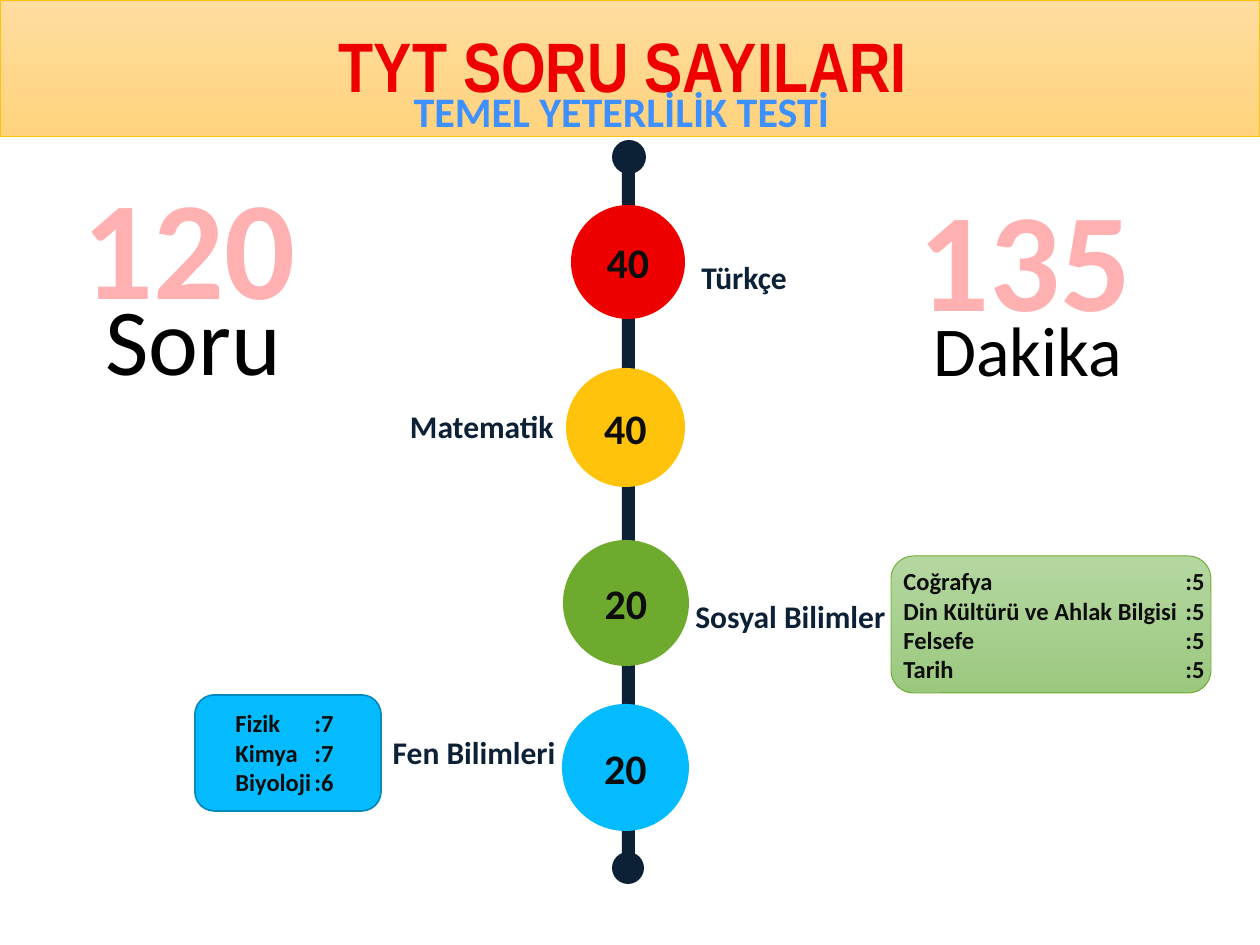
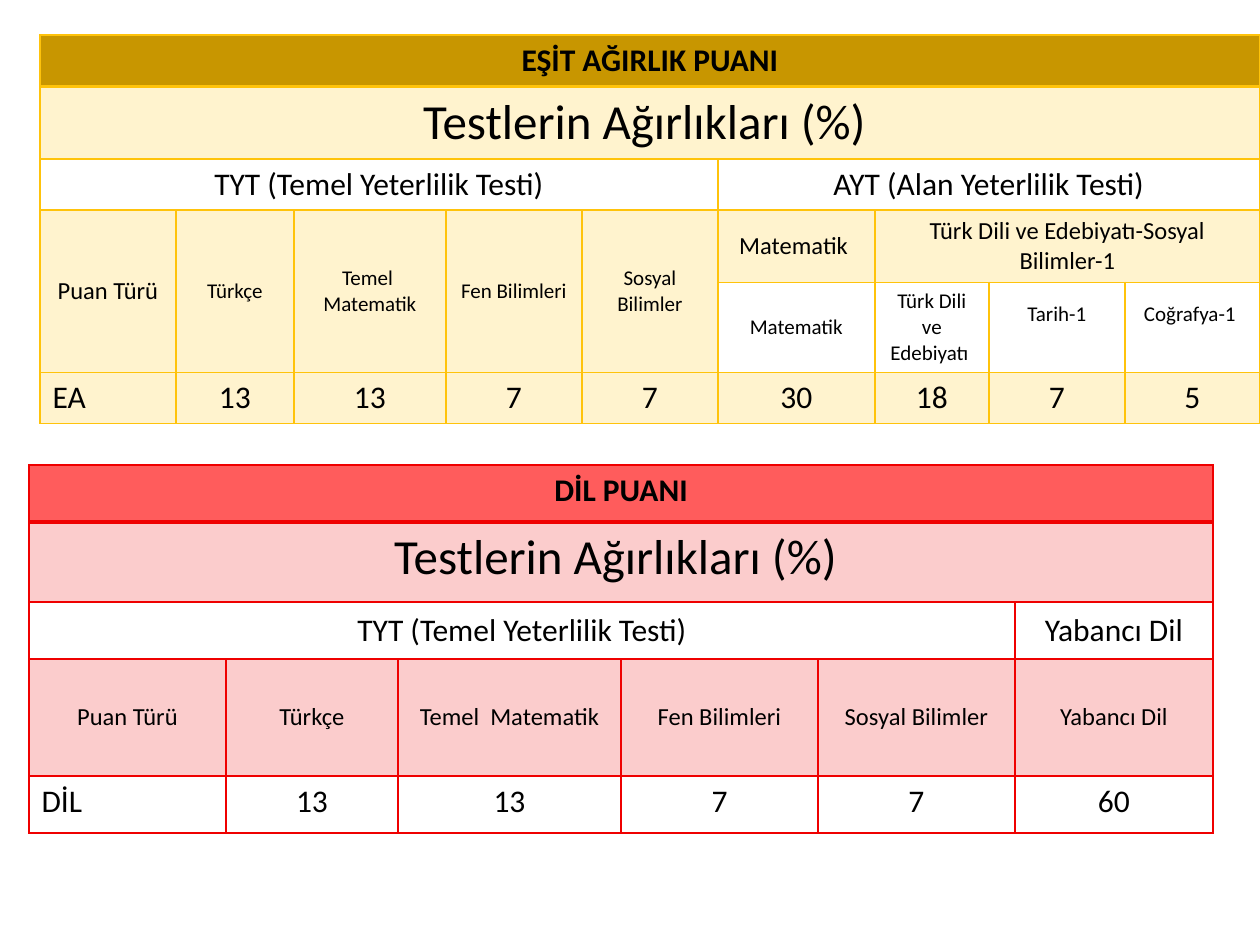
from lxml import etree
from pptx import Presentation
from pptx import util as u
from pptx.dml.color import RGBColor
from pptx.enum import shapes, text
from pptx.oxml import ns

PX = 914400 / 126  # EMU per px
RED, AMBER, GREEN, BLUE = "EF0000", "FFC30B", "6DAA2D", "05BBFF"
NAVY, INK, BLACK, PINK = "0C2036", "0D0D0D", "000000", "FFB1B1"
LEFT, CENTER, RIGHT = text.PP_ALIGN.LEFT, text.PP_ALIGN.CENTER, text.PP_ALIGN.RIGHT
TOP, MIDDLE = text.MSO_ANCHOR.TOP, text.MSO_ANCHOR.MIDDLE
RECT = shapes.MSO_SHAPE.RECTANGLE
ROUND = shapes.MSO_SHAPE.ROUNDED_RECTANGLE
OVAL = shapes.MSO_SHAPE.OVAL


def px(n):
    return u.Emu(round(n * PX))


def rgb(color):
    return RGBColor.from_string(color)


def add_line(p, line, size, color, align, bold, font="Calibri"):
    p.alignment = align
    r = p.add_run()
    r.text = line
    r.font.size, r.font.bold, r.font.name = u.Pt(size), bold, font
    r.font.color.rgb = rgb(color)


def write(tf, lines, size, color, align=LEFT, bold=True, font="Calibri", anchor=TOP):
    tf.word_wrap = True
    tf.auto_size = text.MSO_AUTO_SIZE.NONE
    tf.vertical_anchor = anchor
    for i, line in enumerate(lines):
        p = tf.add_paragraph() if i else tf.paragraphs[0]
        add_line(p, line, size, color, align, bold, font)


def add_text(slide, x, y, w, h, line, size, color, align=LEFT, bold=True):
    sp = slide.shapes.add_textbox(px(x), px(y), px(w), px(h))
    write(sp.text_frame, [line], size, color, align, bold)


def add_shape(slide, kind, x, y, w, h, fill, line=None, line_width=0.5):
    """A fill is one colour, or a (top, bottom) pair for a gradient."""
    sp = slide.shapes.add_shape(kind, px(x), px(y), px(w), px(h))
    sp.shadow.inherit = False
    if isinstance(fill, tuple):
        sp.fill.gradient()
        sp.fill.gradient_angle = 270
        for stop, color in zip(sp.fill.gradient_stops, fill):
            stop.color.rgb = rgb(color)
    else:
        sp.fill.solid()
        sp.fill.fore_color.rgb = rgb(fill)
    if line:
        sp.line.color.rgb = rgb(line)
        sp.line.width = u.Pt(line_width)
    else:
        sp.line.fill.background()
    return sp


# Slide 1: question counts

def header(slide, x, y, w, h, title, subtitle):
    band = add_shape(slide, RECT, x, y, w, h, ("FFDD9F", "FFD37D"), AMBER)
    slide.shapes._spTree.insert(2, band._element)  # behind the title
    sp = slide.shapes.title
    sp.left, sp.top, sp.width, sp.height = px(x - 7), px(y + 16), px(w), px(h)
    write(sp.text_frame, [title], 40, RED, CENTER, font="Arial Narrow")
    add_text(slide, x + 56, y + 79, w - 129, 63, subtitle, 24, "3F90FF", CENTER)


def timeline(slide, x, y, tests):
    # Bar with a dot at each end
    add_shape(slide, RECT, x + 60, y + 29, 13, 685, NAVY)
    for dy, size in ((0, 34), (712, 32)):
        add_shape(slide, OVAL, x + 50, y + dy, size, size, NAVY)
    # One circle and label per test
    for count, color, dx, dy, size, name, label_x, label_y, align in tests:
        sp = add_shape(slide, OVAL, x + dx, y + dy, size, size, color)
        write(sp.text_frame, [count], 24, INK, CENTER, anchor=MIDDLE)
        add_text(slide, x + label_x, y + label_y, 230, 50, name, 18, NAVY, align)


def topic_card(slide, x, y, w, h, fill, line, line_width, indent, inset, tab, topics):
    add_shape(slide, ROUND, x, y, w, h, fill, line, line_width)
    sp = slide.shapes.add_textbox(px(x + indent), px(y + inset),
                                  px(w + 12 - indent), px(h - 2 * inset))
    write(sp.text_frame, [f"{name}\t:{count}" for name, count in topics], 14, INK)
    for p in sp.text_frame.paragraphs:
        tabs = etree.SubElement(p._p.get_or_add_pPr(), ns.qn("a:tabLst"))
        etree.SubElement(tabs, ns.qn("a:tab"), pos=str(px(tab)), algn="l")


def big_figure(slide, x, y, number, unit, unit_dx, unit_dy, unit_size):
    add_text(slide, x, y, 300, 183, number, 80, PINK)
    add_text(slide, x + unit_dx, y + unit_dy, 247, 127, unit, unit_size, BLACK, bold=False)


def question_slide(prs):
    slide = prs.slides.add_slide(prs.slide_layouts[5])
    header(slide, 0, 0, 1260, 137, "TYT SORU SAYILARI", "TEMEL YETERLİLİK TESTİ")
    timeline(slide, 562, 140, [
        ("40", RED, 9, 65, 114, "Türkçe", 127, 112, LEFT),
        ("40", AMBER, 4, 228, 119, "Matematik", -226, 261, RIGHT),
        ("20", GREEN, 1, 400, 126, "Sosyal Bilimler", 121, 451, LEFT),
        ("20", BLUE, 0, 564, 127, "Fen Bilimleri", -224, 587, RIGHT),
    ])
    topic_card(slide, 891, 556, 320, 137, ("B4D7A0", "9BC87F"), GREEN, 0.5, 0, 4, 282, [
        ("Coğrafya", 5), ("Din Kültürü ve Ahlak Bilgisi", 5), ("Felsefe", 5), ("Tarih", 5)])
    topic_card(slide, 195, 695, 186, 116, BLUE, "048ABD", 1, 28, 7, 79, [
        ("Fizik", 7), ("Kimya", 7), ("Biyoloji", 6)])
    big_figure(slide, 70, 153, "120", "Soru", 23, 122, 54)
    big_figure(slide, 906, 165, "135", "Dakika", 15, 135, 40)


# Slide 2: score weights

def set_borders(cell, color, bottom):
    tcPr = cell._tc.get_or_add_tcPr()
    for i, side in enumerate("LRTB"):
        width = u.Pt(bottom if side == "B" else 1)
        ln = etree.Element(ns.qn(f"a:ln{side}"), w=str(width))
        fill = etree.SubElement(ln, ns.qn("a:solidFill"))
        etree.SubElement(fill, ns.qn("a:srgbClr"), val=color)
        tcPr.insert(i, ln)


def fill_cell(cell, color, alpha=None):
    cell.fill.solid()
    cell.fill.fore_color.rgb = rgb(color)
    if alpha:
        srgb = cell._tc.tcPr.find(ns.qn("a:solidFill") + "/" + ns.qn("a:srgbClr"))
        etree.SubElement(srgb, ns.qn("a:alpha"), val=str(alpha * 1000))


def score_table(slide, x, y, cols, rows, color, title_fill, title, groups, heads,
                values, shade_values):
    """Heads are (row, column, text, size, shaded, row span, column span)."""
    frame = slide.shapes.add_table(len(rows), len(cols), px(x), px(y),
                                   px(sum(cols)), px(sum(rows)))
    table = frame.table
    table.first_row = table.horz_banding = False
    for col, width in zip(table.columns, cols):
        col.width = px(width)
    for row, height in zip(table.rows, rows):
        row.height = px(height)
    for r in range(len(rows)):
        for c in range(len(cols)):
            cell = table.cell(r, c)
            cell.fill.background()
            set_borders(cell, color, 1 if r else 2)

    def put(r, c, line, size, shaded=False, down=1, across=1, align=CENTER,
            anchor=MIDDLE, bold=False):
        cell = table.cell(r, c)
        if down * across > 1:
            cell.merge(table.cell(r + down - 1, c + across - 1))
        if shaded:
            fill_cell(cell, color, 20)
        add_line(cell.text_frame.paragraphs[0], line, size, BLACK, align, bold)
        cell.vertical_anchor = anchor
        return cell

    # Title rows
    n = len(cols)
    fill_cell(put(0, 0, title, 18, across=n, anchor=TOP, bold=True), title_fill)
    put(1, 0, "Testlerin Ağırlıkları (%) ", 28, True, across=n, anchor=TOP)
    # Groups and column heads
    start = 0
    for name, span in groups:
        put(2, start, name, 18, across=span)
        start += span
    for head in heads:
        put(*head)
    # Weights
    for c, value in enumerate(values):
        put(len(rows) - 1, c, value, 18, shade_values,
            align=CENTER if c else LEFT, anchor=TOP)
    return table


def weight_slide(prs):
    slide = prs.slides.add_slide(prs.slide_layouts[6])
    tyt = ("TYT (Temel Yeterlilik Testi)", 5)
    tyt_heads = ["Puan Türü", "Türkçe", "Temel  Matematik", "Fen Bilimleri", "Sosyal Bilimler"]

    # Language score
    score_table(
        slide, 29, 465, [197, 172, 223, 197, 197, 198], [57, 80, 57, 117, 57],
        RED, "FF5C5C", "DİL PUANI", [tyt, ("Yabancı Dil", 1)],
        [(3, c, name, 14, True) for c, name in enumerate(tyt_heads + ["Yabancı Dil"])],
        ["DİL", "13", "13", "7", "7", "60"], False)

    # Equal-weight score
    heads = [(3, c, name, 12 if c else 14, True, 2) for c, name in enumerate(tyt_heads)]
    heads += [(3, 5, "Matematik ", 14, True),
              (3, 6, "Türk Dili ve Edebiyatı-Sosyal Bilimler-1", 14, True, 1, 3)]
    fields = ["Matematik", "Türk Dili ve Edebiyatı ", "Tarih-1", "Coğrafya-1 "]
    heads += [(4, c, name, 12) for c, name in enumerate(fields, 5)]
    table = score_table(
        slide, 40, 35, [136, 118, 152, 136, 136, 157, 114, 136, 135],
        [51, 73, 51, 72, 90, 51], AMBER, "C89600", "EŞİT AĞIRLIK PUANI",
        [tyt, ("AYT (Alan Yeterlilik Testi)", 4)], heads,
        ["EA", "13", "13", "7", "7", "30", "18", "7", "5"], True)
    for c in (7, 8):
        table.cell(4, c).margin_bottom = px(32)


def main():
    prs = Presentation()
    prs.slide_width, prs.slide_height = px(1260), px(945)
    question_slide(prs)
    weight_slide(prs)
    prs.save("out.pptx")


if __name__ == "__main__":
    main()
